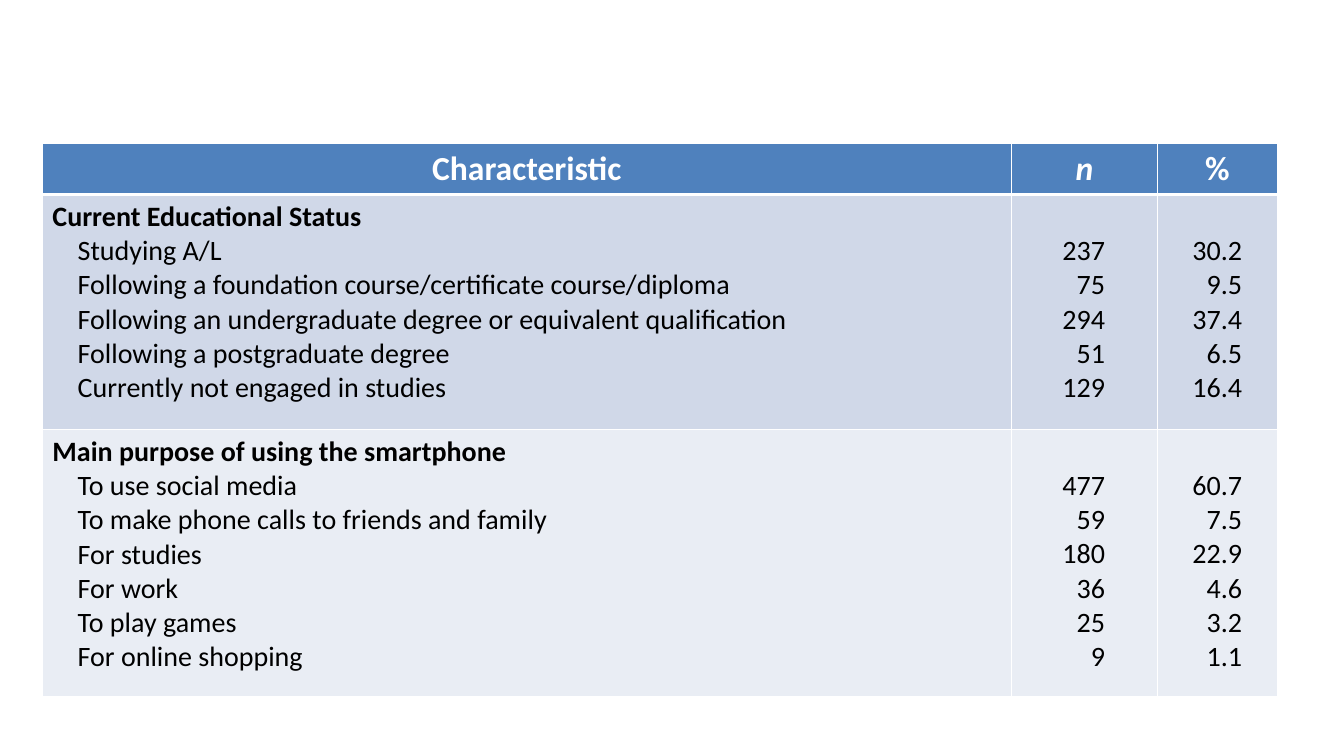
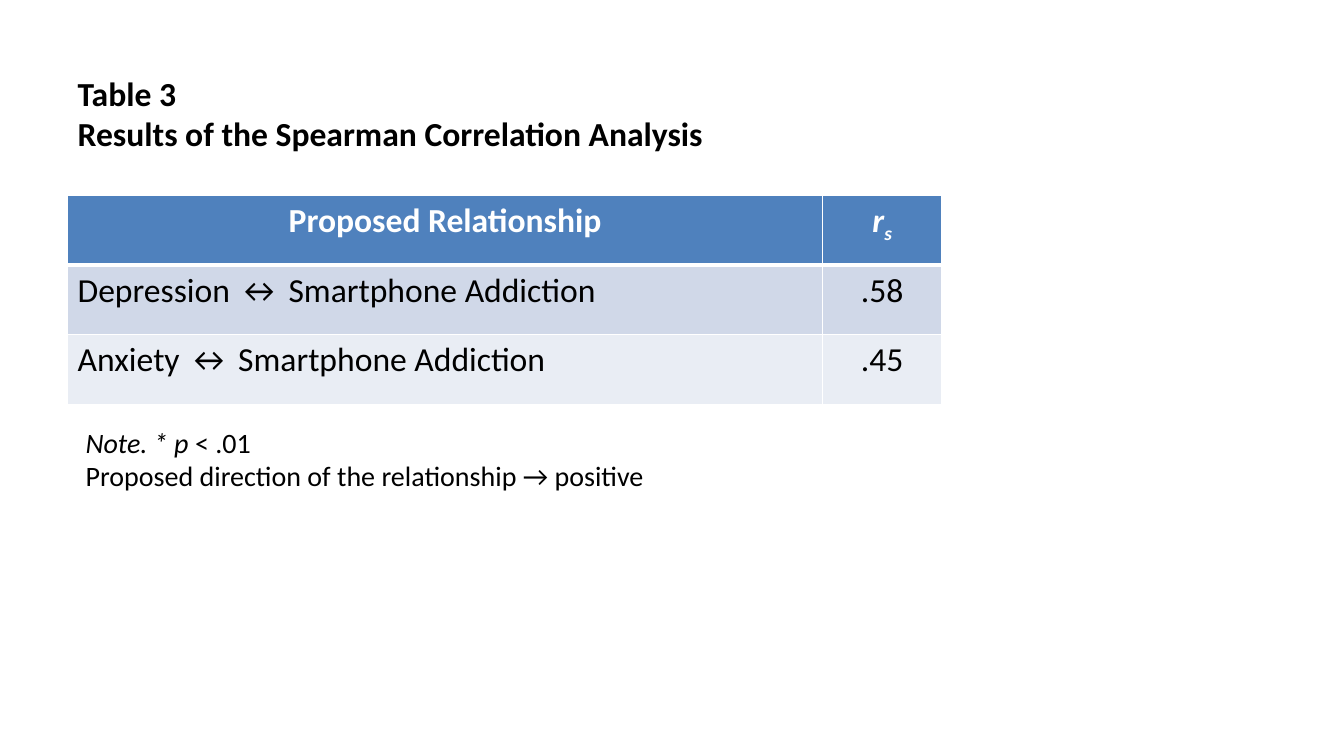
from dataclasses import dataclass

from lxml import etree
from pptx import Presentation
from pptx.dml.color import RGBColor
from pptx.enum.text import MSO_ANCHOR, MSO_AUTO_SIZE, PP_ALIGN
from pptx.oxml.ns import qn
from pptx.util import Inches, Pt

LEFT, MID, RIGHT = PP_ALIGN.LEFT, PP_ALIGN.CENTER, PP_ALIGN.RIGHT
TOP, FIXED = MSO_ANCHOR.TOP, MSO_AUTO_SIZE.NONE
TITLE_ONLY, BLANK = 5, 6


@dataclass(frozen=True)
class Theme:
    """Colours, font, type sizes and line widths of the deck."""
    font: str = "Calibri"
    head: str = "4F81BD"
    bands: tuple = ("D0D8E8", "E9EDF4")
    white: str = "FFFFFF"
    ink: str = "000000"
    large: int = 24
    small: int = 20
    thin: int = 1
    thick: int = 3


THEME = Theme()

GROUPS = [
    ("Current Educational Status", [
        ("Studying A/L", "237", "30.2"),
        ("Following a foundation course/certificate course/diploma", "75", "9.5"),
        ("Following an undergraduate degree or equivalent qualification", "294", "37.4"),
        ("Following a postgraduate degree", "51", "6.5"),
        ("Currently not engaged in studies", "129", "16.4"),
    ]),
    ("Main purpose of using the smartphone", [
        ("To use social media", "477", "60.7"),
        ("To make phone calls to friends and family", "59", "7.5"),
        ("For studies", "180", "22.9"),
        ("For work", "36", "4.6"),
        ("To play games", "25", "3.2"),
        ("For online shopping", "9", "1.1"),
    ]),
]

RESULTS = [
    ("Depression ↔ Smartphone Addiction", ".58"),
    ("Anxiety ↔ Smartphone Addiction", ".45"),
]


def write(frame, *runs, size=THEME.small, color=THEME.ink, bold=False,
          align=LEFT, indent=0):
    """Add one paragraph of runs, each a text or a (text, italic, baseline) tuple."""
    para = frame.paragraphs[0]
    if para.runs:
        para = frame.add_paragraph()
    para.alignment = align
    if indent:
        para._p.get_or_add_pPr().set("marL", str(Inches(indent)))
    for item in runs:
        text, italic, base = (item, False, 0) if isinstance(item, str) else item
        run = para.add_run()
        run.text = text
        font = run.font
        font.name, font.size = THEME.font, Pt(size)
        font.bold, font.italic = bold, italic
        font.color.rgb = RGBColor.from_string(color)
        if base:
            run._r.get_or_add_rPr().set("baseline", str(base * 1000))


def edge(cell, side, width):
    """Draw one white border of a cell."""
    line = etree.SubElement(cell._tc.get_or_add_tcPr(), qn("a:ln" + side), w=str(Pt(width)))
    fill = etree.SubElement(line, qn("a:solidFill"))
    etree.SubElement(fill, qn("a:srgbClr"), val=THEME.white)


def paint(cell, row):
    """Give a cell the borders and fill of its row."""
    for side in "LRTB":
        heavy = (row, side) in ((0, "B"), (1, "T"))
        edge(cell, side, THEME.thick if heavy else THEME.thin)
    cell.fill.solid()
    color = THEME.bands[(row - 1) % 2] if row else THEME.head
    cell.fill.fore_color.rgb = RGBColor.from_string(color)


def grid(slide, left, top, widths, heights, heads):
    """Add a banded table with its header row and return it."""
    table = slide.shapes.add_table(
        len(heights), len(widths), Inches(left), Inches(top),
        Inches(sum(widths)), Inches(sum(heights))).table
    for col, width in zip(table.columns, widths):
        col.width = Inches(width)
    for row, height in enumerate(heights):
        table.rows[row].height = Inches(height)
        for col in range(len(widths)):
            paint(table.cell(row, col), row)
    for col, runs in enumerate(heads):
        write(table.cell(0, col).text_frame, *runs, size=THEME.large,
              color=THEME.white, bold=True, align=MID)
    return table


def figures(cell, values, right):
    """Stack right-aligned numbers below the level of the group heading."""
    cell.margin_top, cell.margin_right = Inches(0.39), Inches(right)
    for value in values:
        write(cell.text_frame, value, align=RIGHT)


def profile(deck):
    """Build the slide of sample characteristics."""
    slide = deck.slides.add_slide(deck.slide_layouts[BLANK])
    table = grid(slide, 0.42, 1.42, (9.61, 1.45, 1.19), (0.51, 2.33, 2.65),
                 [["Characteristic"], [("n", True, 0)], ["%"]])
    for row, (head, items) in enumerate(GROUPS, 1):
        names, counts, shares = zip(*items)
        frame = table.cell(row, 0).text_frame
        write(frame, head, bold=True)
        for name in names:
            write(frame, name, indent=0.25)
        figures(table.cell(row, 1), counts, 0.52)
        figures(table.cell(row, 2), shares, 0.35)


def results(deck):
    """Build the slide of correlation results."""
    slide = deck.slides.add_slide(deck.slide_layouts[TITLE_ONLY])
    title = slide.shapes.title
    title.left, title.top = Inches(0.67), Inches(0.67)
    title.width, title.height = Inches(10.25), Inches(0.91)
    frame = title.text_frame
    frame.auto_size, frame.vertical_anchor = FIXED, TOP
    for text in ("Table 3", "Results of the Spearman Correlation Analysis"):
        write(frame, text, size=THEME.large, bold=True)

    table = grid(slide, 0.67, 1.94, (7.49, 1.18), (0.69,) * 3,
                 [["Proposed Relationship"], [("r", True, 0), ("s", True, -25)]])
    for row, (link, value) in enumerate(RESULTS, 1):
        write(table.cell(row, 0).text_frame, link, size=THEME.large)
        write(table.cell(row, 1).text_frame, value, size=THEME.large, align=MID)

    note = slide.shapes.add_textbox(
        Inches(0.75), Inches(4.17), Inches(8.42), Inches(0.77)).text_frame
    note.word_wrap = True
    write(note, ("Note. * p", True, 0), " < .01")
    write(note, "Proposed direction of the relationship → positive")


def main():
    """Build and save the deck."""
    deck = Presentation()
    deck.slide_width, deck.slide_height = Inches(13.33), Inches(7.5)
    profile(deck)
    results(deck)
    deck.save("out.pptx")


if __name__ == "__main__":
    main()
